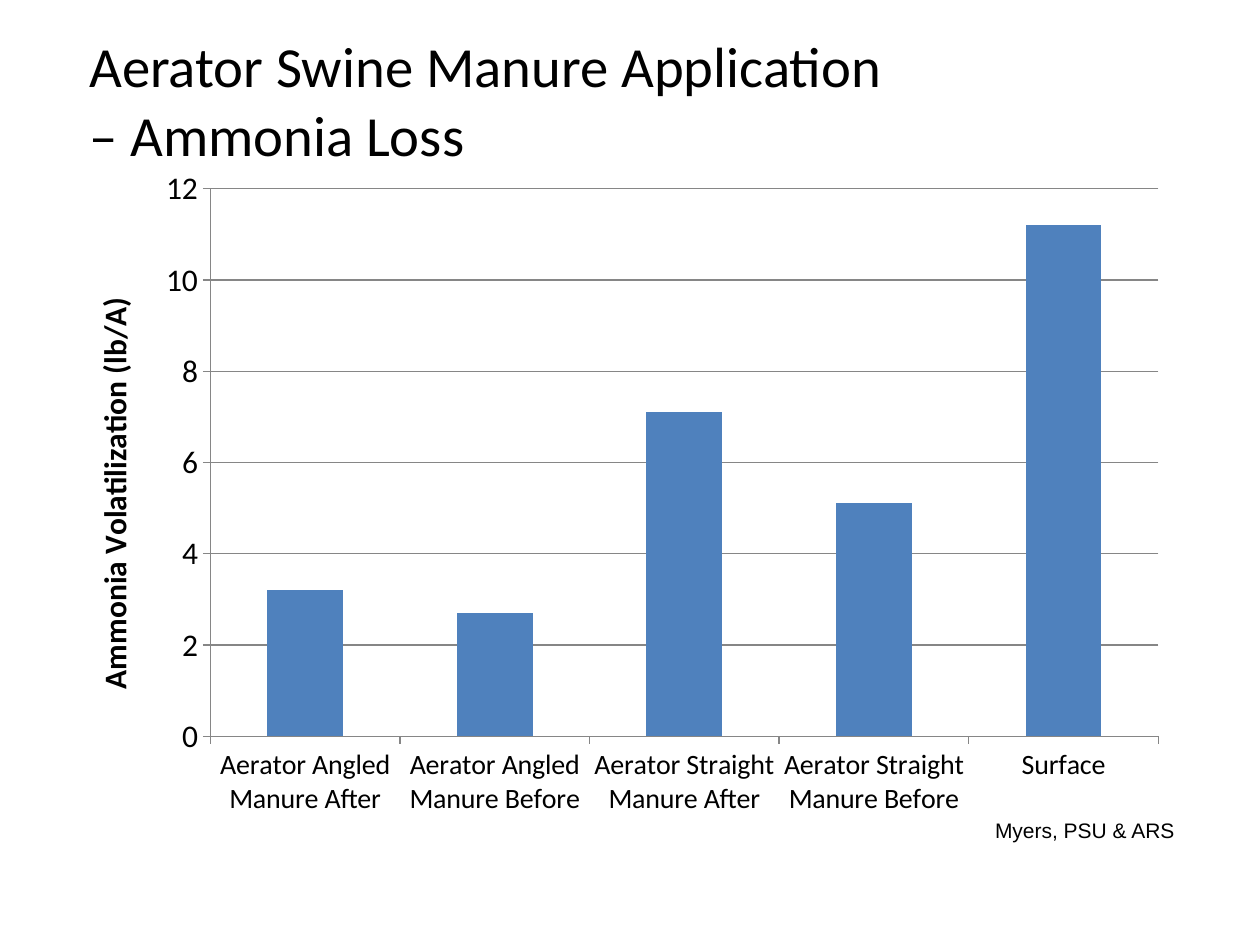
from pptx import Presentation
from pptx.chart.data import CategoryChartData
from pptx.dml.color import RGBColor
from pptx.enum.chart import XL_CHART_TYPE, XL_TICK_MARK
from pptx.enum.text import MSO_ANCHOR, PP_ALIGN
from pptx.util import Pt

TITLE = "Aerator Swine Manure Application \v– Ammonia Loss"
CREDIT = "Myers, PSU & ARS"
AXIS_TITLE = "Ammonia Volatilization (lb/A)"
LOSSES = {
    "Aerator Angled Manure After": 3.2,
    "Aerator Angled Manure Before": 2.7,
    "Aerator Straight Manure After": 7.1,
    "Aerator Straight Manure Before": 5.1,
    "Surface": 11.2,
}

BLACK = RGBColor(0, 0, 0)
BLUE = RGBColor(0x4F, 0x81, 0xBD)
GRAY = RGBColor(0x86, 0x86, 0x86)
COLUMNS = XL_CHART_TYPE.COLUMN_CLUSTERED
OUTSIDE = XL_TICK_MARK.OUTSIDE
NO_TICK = XL_TICK_MARK.NONE


def set_font(font, name, size, bold=False):
    font.name = name
    font.size = Pt(size)
    font.bold = bold
    font.color.rgb = BLACK


def set_line(line):
    line.color.rgb = GRAY
    line.width = Pt(0.75)


prs = Presentation()
prs.slide_width, prs.slide_height = Pt(720), Pt(540)
slide = prs.slides.add_slide(prs.slide_layouts[5])

title = slide.shapes.title
title.left, title.top, title.width, title.height = Pt(51), Pt(28), Pt(641.5), Pt(57.5)
title_frame = title.text_frame
title_frame.text = TITLE
title_frame.word_wrap = True
title_frame.vertical_anchor = MSO_ANCHOR.MIDDLE
title_frame.margin_left = title_frame.margin_right = 0
heading = title_frame.paragraphs[0]
heading.alignment = PP_ALIGN.LEFT
for run in heading.runs:
    set_font(run.font, "Calibri", 32.4)

data = CategoryChartData()
data.categories = list(LOSSES)
data.add_series("Series 1", list(LOSSES.values()))
chart = slide.shapes.add_chart(
    COLUMNS, Pt(36.7), Pt(89.3), Pt(638), Pt(385.2), data).chart
chart.has_legend = False
chart.has_title = False
set_font(chart.font, "Calibri", 18)

plot = chart.plots[0]
plot.gap_width = 150
plot.vary_by_categories = False
bars = plot.series[0].format.fill
bars.solid()
bars.fore_color.rgb = BLUE

for axis, size in ((chart.category_axis, 16), (chart.value_axis, 18)):
    axis.major_tick_mark = OUTSIDE
    axis.minor_tick_mark = NO_TICK
    set_font(axis.tick_labels.font, "Calibri", size)
    set_line(axis.format.line)

loss_axis = chart.value_axis
loss_axis.minimum_scale, loss_axis.maximum_scale = 0, 12
loss_axis.major_unit = 2
loss_axis.has_major_gridlines = True
set_line(loss_axis.major_gridlines.format.line)
axis_frame = loss_axis.axis_title.text_frame
axis_frame.text = AXIS_TITLE
set_font(axis_frame.paragraphs[0].runs[0].font, "Calibri", 18, bold=True)

credit = slide.shapes.add_textbox(Pt(561.5), Pt(463.7), Pt(121), Pt(21.6)).text_frame
credit.word_wrap = True
credit.text = CREDIT
set_font(credit.paragraphs[0].runs[0].font, "Arial", 12)

prs.save("out.pptx")
